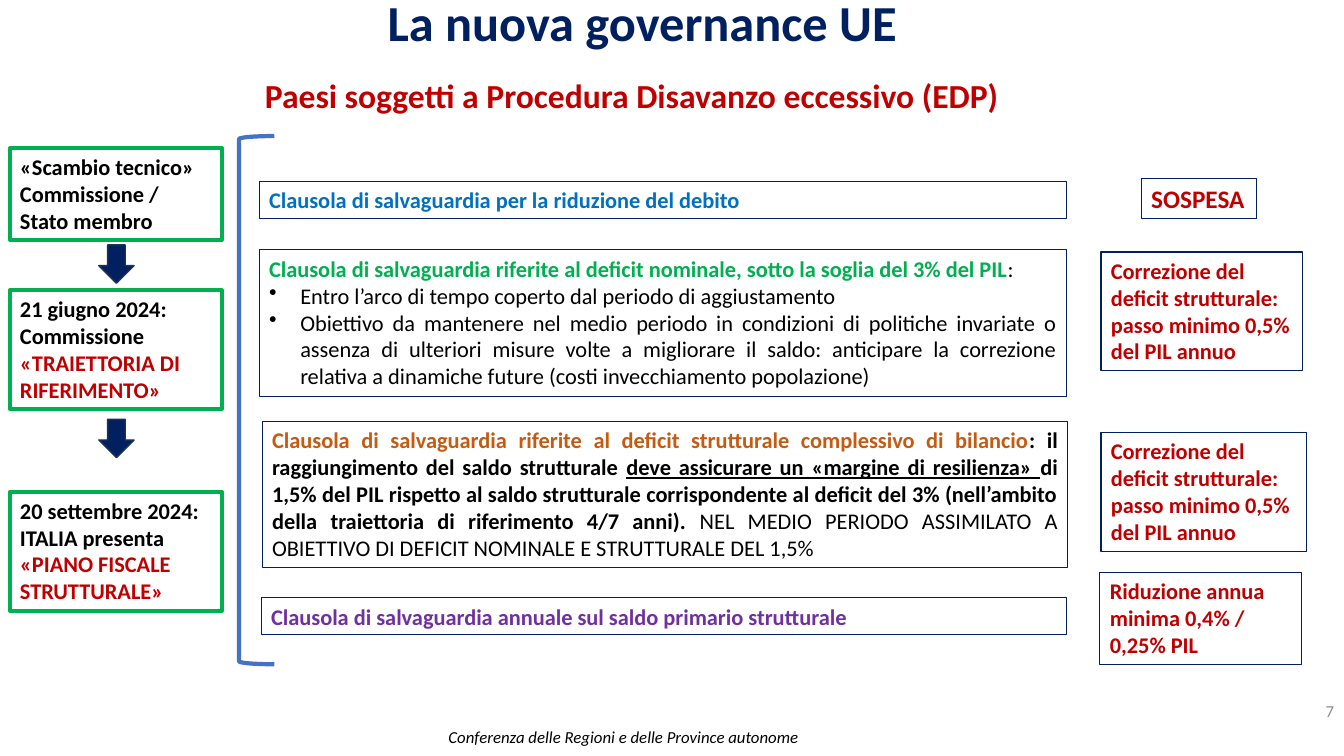
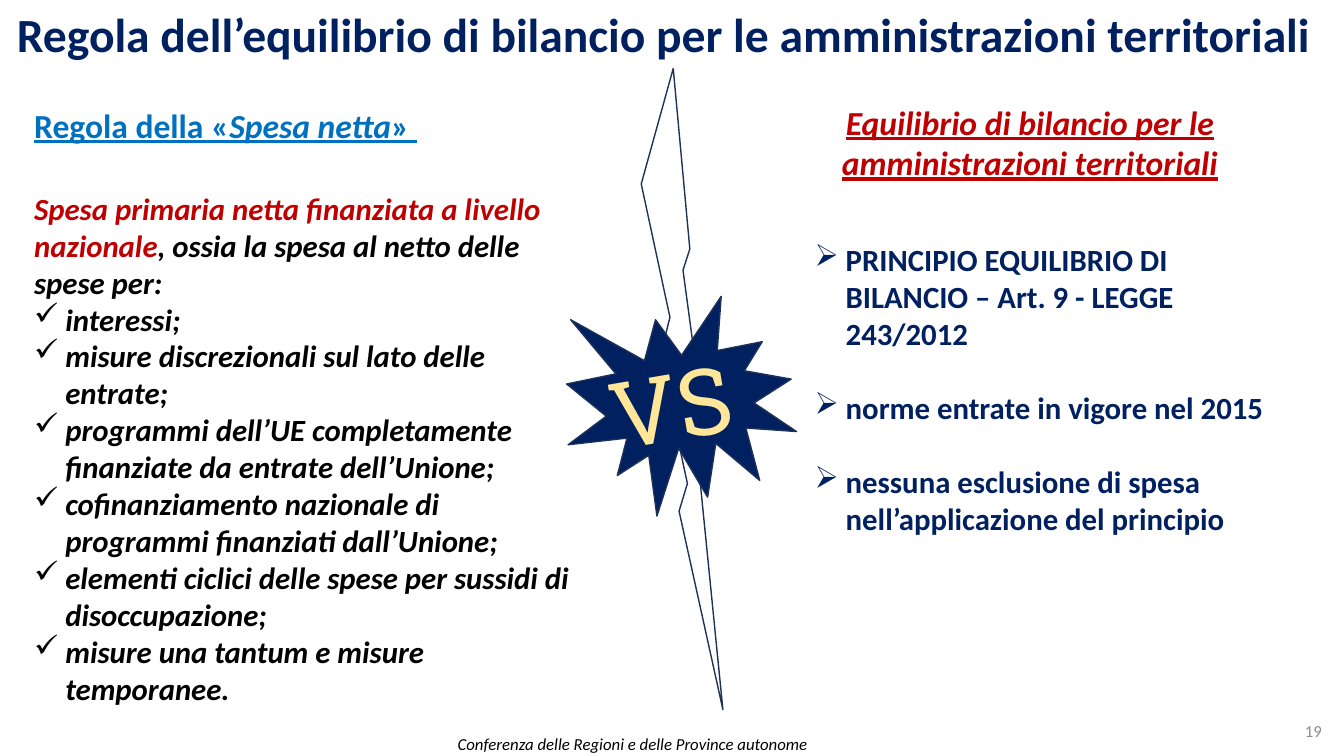
"""Build two slides on the new EU fiscal governance and the balanced-budget rule."""
import dataclasses

import lxml.etree
import pptx
import pptx.dml.color
import pptx.enum.shapes
import pptx.enum.text
import pptx.oxml.ns
import pptx.util

Inches = pptx.util.Inches
Pt = pptx.util.Pt
RGB = pptx.dml.color.RGBColor.from_string
SHAPE = pptx.enum.shapes.MSO_SHAPE
ALIGN = pptx.enum.text.PP_ALIGN
ANCHOR = pptx.enum.text.MSO_ANCHOR


@dataclasses.dataclass(frozen=True)
class Theme:
    font: str = "Calibri"
    display_font: str = "Roboto Slab"
    navy: str = "002060"
    edge: str = "1E3256"
    red: str = "C00000"
    blue: str = "0070C0"
    bracket: str = "4472C4"
    green: str = "00B050"
    orange: str = "C55A11"
    purple: str = "7030A0"
    cream: str = "FFE699"
    black: str = "000000"
    white: str = "FFFFFF"
    grey: str = "8C8C8C"
    small: int = 12
    body: int = 16
    label: int = 18
    large: int = 22
    heading: int = 24
    versus: int = 66
    indent: float = 0.31


T = Theme()


def write(sp, size, paragraphs, align=ALIGN.LEFT, bullet=None, anchor=ANCHOR.TOP, font=T.font, gap=0):
    """Fill a shape with paragraphs of (text, colour, style) runs; bullets follow the plain lead."""
    tf = sp.text_frame
    tf.word_wrap = True
    tf.vertical_anchor = anchor
    for i, runs in enumerate(paragraphs):
        p = tf.paragraphs[0] if i == 0 else tf.add_paragraph()
        p.alignment = align
        p.space_before = Pt(gap if i else 0)
        for text, color, style in runs:
            r = p.add_run()
            r.text = text
            r.font.name = font
            r.font.size = Pt(size)
            r.font.color.rgb = RGB(color)
            r.font.bold = "b" in style
            r.font.italic = "i" in style
            r.font.underline = "u" in style
        if bullet and (i or len(runs) == 1):
            pPr = p._p.get_or_add_pPr()
            pPr.set("marL", str(Inches(T.indent)))
            pPr.set("indent", str(-Inches(T.indent)))
            bu = lxml.etree.SubElement(pPr, pptx.oxml.ns.qn("a:buChar"))
            bu.set("char", bullet)
    return sp


def draw(s, kind, box, line, width, fill=None):
    """Add an outlined preset shape, hollow unless a fill is given."""
    sp = s.shapes.add_shape(kind, *map(Inches, box))
    sp.shadow.inherit = False
    sp.line.color.rgb = RGB(line)
    sp.line.width = Pt(width)
    if fill:
        sp.fill.solid()
        sp.fill.fore_color.rgb = RGB(fill)
    else:
        sp.fill.background()
    return sp


prs = pptx.Presentation()
prs.slide_width = Inches(13.33)
prs.slide_height = Inches(7.5)
blank = prs.slide_layouts[6]

frames = [
    ("La nuova governance UE", 36, ALIGN.CENTER, (0.15, -0.14, 12.44, 0.71),
     (4.35, 7.16), "7", (12.28, 6.9, 1.05, 0.31)),
    ("Regola dell’equilibrio di bilancio per le amministrazioni territoriali", 34, ALIGN.LEFT,
     (0.07, 0, 13.26, 0.67), (4.44, 7.23), "19", (10.21, 7.05, 3, 0.4)),
]
for title, size, align, title_box, footer_at, number, number_box in frames:
    s = prs.slides.add_slide(blank)
    write(s.shapes.add_textbox(*map(Inches, title_box)), size, [[(title, T.navy, "b")]], align)
    write(s.shapes.add_textbox(*map(Inches, (*footer_at, 4, 0.3))), T.small,
          [[("Conferenza delle Regioni e delle Province autonome", T.black, "i")]])
    write(s.shapes.add_textbox(*map(Inches, number_box)), T.small,
          [[(number, T.grey, "")]], ALIGN.RIGHT, anchor=ANCHOR.MIDDLE)

governance, balance = prs.slides

s = governance
write(s.shapes.add_textbox(*map(Inches, (1.84, 0.69, 8.85, 0.5))), T.heading,
      [[("Paesi soggetti a Procedura Disavanzo eccessivo (EDP)", T.red, "b")]], ALIGN.CENTER)

steps = [
    (1.47, 0.91, [("«Scambio tecnico» Commissione / Stato membro", T.black, "b")]),
    (2.88, 1.18, [("21 giugno 2024: Commissione ", T.black, "b"),
                  ("«TRAIETTORIA DI RIFERIMENTO»", T.red, "b")]),
    (4.88, 1.18, [("20 settembre 2024: ITALIA presenta ", T.black, "b"),
                  ("«PIANO FISCALE STRUTTURALE»", T.red, "b")]),
]
for top, height, runs in steps:
    write(draw(s, SHAPE.RECTANGLE, (0.1, top, 2.1, height), T.green, 3), T.body, [runs])
for top in (2.43, 4.16):
    draw(s, SHAPE.DOWN_ARROW, (0.98, top, 0.35, 0.38), T.edge, 1, T.navy)
draw(s, SHAPE.LEFT_BRACKET, (2.37, 1.35, 0.35, 5.24), T.bracket, 3)

clauses = [
    ((2.57, 1.8, 8.01, 0.37), ALIGN.LEFT,
     [[("Clausola di salvaguardia per la riduzione del debito", T.blue, "b")]]),
    ((2.57, 2.48, 8.01, 1.45), ALIGN.JUSTIFY,
     [[("Clausola di salvaguardia riferite al deficit nominale, sotto la soglia del 3% del PIL",
        T.green, "b"), (":", T.black, "")],
      [("Entro l’arco di tempo coperto dal periodo di aggiustamento", T.black, "")],
      [("Obiettivo da mantenere nel medio periodo in condizioni di politiche invariate o assenza "
        "di ulteriori misure volte a migliorare il saldo: anticipare la correzione relativa a "
        "dinamiche future (costi invecchiamento popolazione)", T.black, "")]]),
    ((2.6, 4.18, 7.99, 1.45), ALIGN.JUSTIFY,
     [[("Clausola di salvaguardia riferite al deficit strutturale complessivo di bilancio",
        T.orange, "b"),
       (": il raggiungimento del saldo strutturale ", T.black, "b"),
       ("deve assicurare un «margine di resilienza» ", T.black, "bu"),
       ("di 1,5% del PIL rispetto al saldo strutturale corrispondente al deficit del 3% "
        "(nell’ambito della traiettoria di riferimento 4/7 anni). ", T.black, "b"),
       ("NEL MEDIO PERIODO ASSIMILATO A OBIETTIVO DI DEFICIT NOMINALE E STRUTTURALE DEL 1,5%",
        T.black, "")]]),
    ((2.59, 5.93, 7.99, 0.37), ALIGN.LEFT,
     [[("Clausola di salvaguardia annuale sul saldo primario strutturale", T.purple, "b")]]),
]
for box, align, paragraphs in clauses:
    write(draw(s, SHAPE.RECTANGLE, box, T.navy, 0.75), T.body, paragraphs, align,
          bullet="•" if len(paragraphs) > 1 else None)

correction = "Correzione del deficit strutturale: passo minimo 0,5% del PIL annuo"
effects = [
    ((11.32, 1.77, 1.14, 0.4), T.label, "SOSPESA"),
    ((10.92, 2.5, 2, 1.18), T.body, correction),
    ((10.92, 4.29, 2.04, 1.18), T.body, correction),
    ((10.91, 5.68, 2, 0.91), T.body, "Riduzione annua minima 0,4% / 0,25% PIL"),
]
for box, size, text in effects:
    write(draw(s, SHAPE.RECTANGLE, box, T.navy, 0.75), size, [[(text, T.red, "b")]])

s = balance
write(s.shapes.add_textbox(*map(Inches, (0.24, 0.99, 5.66, 0.5))), T.heading,
      [[("Regola della «", T.blue, "bu"), ("Spesa netta", T.blue, "biu"), ("» ", T.blue, "bu")]])
write(s.shapes.add_textbox(*map(Inches, (7.52, 0.96, 5.39, 0.91))), T.heading,
      [[("Equilibrio di bilancio per le amministrazioni territoriali", T.red, "biu")]],
      ALIGN.CENTER)

exclusions = [
    "interessi;",
    "misure discrezionali sul lato delle entrate;",
    "programmi dell’UE completamente finanziate da entrate dell’Unione;",
    "cofinanziamento nazionale di programmi finanziati dall’Unione;",
    "elementi ciclici delle spese per sussidi di disoccupazione;",
    "misure una tantum e misure temporanee.",
]
lead = [("Spesa primaria netta finanziata a livello nazionale", T.red, "bi"),
        (", ossia la spesa al netto delle spese per:", T.black, "bi")]
write(s.shapes.add_textbox(*map(Inches, (0.24, 1.83, 5.53, 5.28))), T.large,
      [lead] + [[(text, T.black, "bi")] for text in exclusions], bullet="✓")

principles = [
    "PRINCIPIO EQUILIBRIO DI BILANCIO – Art. 9 - LEGGE 243/2012",
    "norme entrate in vigore nel 2015",
    "nessuna esclusione di spesa nell’applicazione del principio",
]
write(s.shapes.add_textbox(*map(Inches, (7.98, 2.34, 4.79, 3.43))), T.large,
      [[(text, T.navy, "b")] for text in principles], bullet="➢", gap=26.5)

draw(s, SHAPE.LIGHTNING_BOLT, (6.36, 0.68, 0.81, 6.36), T.edge, 1, T.white)
draw(s, SHAPE.EXPLOSION1, (5.62, 2.94, 2.28, 2.18), T.edge, 1, T.navy)
versus = write(s.shapes.add_textbox(*map(Inches, (5.94, 3.39, 1.65, 1.21))), T.versus,
               [[("VS", T.cream, "")]], font=T.display_font)
versus.rotation = 350.3

prs.save("out.pptx")
